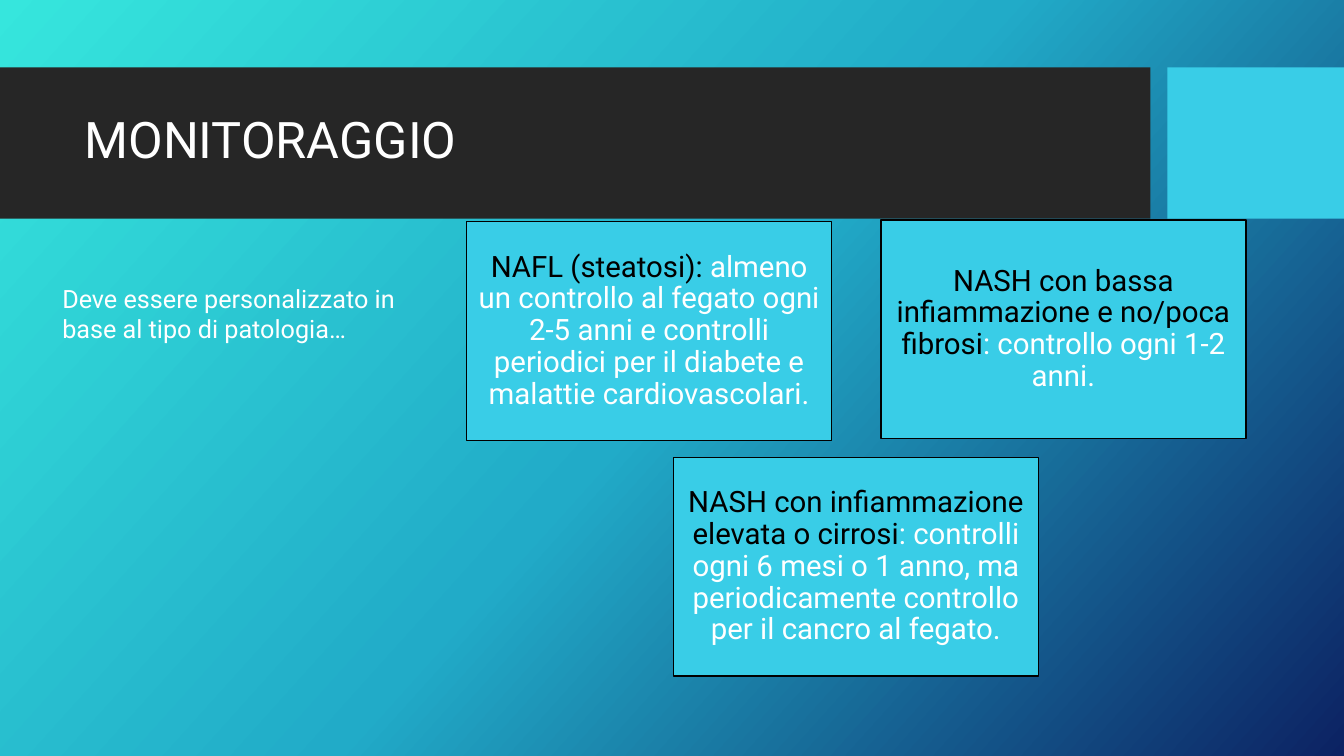
from copy import deepcopy
from pptx import Presentation
from pptx.dml.color import RGBColor
from pptx.enum.shapes import MSO_SHAPE
from pptx.enum.text import MSO_ANCHOR, PP_ALIGN
from pptx.oxml.ns import qn
from pptx.util import Cm, Pt

WIDE, HIGH = 33.87, 19.05
FONT = "Roboto"
DARK, CYAN, WHITE, BLACK = "262626", "39CDE7", "FFFFFF", "000000"
BLEND = [(0, "36E6DD"), (0.5, "21ABC8"), (1, "0C2263")]


def tint(code):
    return RGBColor.from_string(code)


def rect(slide, box, fill, line=None):
    shape = slide.shapes.add_shape(MSO_SHAPE.RECTANGLE, *map(Cm, box))
    shape.shadow.inherit = False
    shape.fill.solid()
    shape.fill.fore_color.rgb = tint(fill)
    if line:
        shape.line.color.rgb = tint(line)
        shape.line.width = Pt(1)
    else:
        shape.line.fill.background()
    return shape


def write(shape, runs, size, anchor=MSO_ANCHOR.TOP, align=PP_ALIGN.LEFT, gap=1.0):
    frame = shape.text_frame
    frame.word_wrap = True
    frame.vertical_anchor = anchor
    para = frame.paragraphs[0]
    para.alignment = align
    para.line_spacing = gap
    for text, code in runs:
        run = para.add_run()
        run.text = text
        run.font.name = FONT
        run.font.size = Pt(size)
        run.font.color.rgb = tint(code)


def backdrop(slide):
    fill = slide.background.fill
    fill.gradient()
    fill.gradient_angle = 318
    # The default gradient has two stops; add the third
    stops = slide.element.find(".//" + qn("a:gsLst"))
    stops.append(deepcopy(stops[-1]))
    for stop, (place, code) in zip(fill.gradient_stops, BLEND):
        stop.position = place
        stop.color.rgb = tint(code)


def header(slide, box, title):
    left, top, width, height = box
    side, gap = 4.45, 0.43
    bar = width - side - gap
    rect(slide, (left, top, bar, height), DARK)
    rect(slide, (left + bar + gap, top, side, height), CYAN)
    area = (left + 1.88, top + 0.38, bar - 2.3, height - 0.81)
    label = slide.shapes.add_textbox(*map(Cm, area))
    write(label, [(title, WHITE)], 36, MSO_ANCHOR.MIDDLE, gap=0.9)


def intro(slide, box, text):
    label = slide.shapes.add_textbox(*map(Cm, box))
    write(label, [(text, WHITE)], 18)


def card(slide, box, stage, advice):
    shape = rect(slide, box, CYAN, BLACK)
    frame = shape.text_frame
    frame.margin_left = frame.margin_right = Cm(0.23)
    frame.margin_top = frame.margin_bottom = Cm(0.23)
    write(shape, [(stage, BLACK), (advice, WHITE)], 21,
          MSO_ANCHOR.MIDDLE, PP_ALIGN.CENTER, 0.9)


def main():
    deck = Presentation()
    deck.slide_width, deck.slide_height = Cm(WIDE), Cm(HIGH)
    slide = deck.slides.add_slide(deck.slide_layouts[6])
    backdrop(slide)
    header(slide, (0, 1.7, WIDE, 3.81), "MONITORAGGIO")
    intro(slide, (1.32, 7.01, 8.97, 1.8),
          "Deve essere personalizzato in base al tipo di patologia…")
    # Care plan for each stage
    cards = [
        (11.76, 5.59, "NAFL (steatosi): ",
         "almeno un controllo al fegato ogni 2-5 anni e controlli "
         "periodici per il diabete e malattie cardiovascolari."),
        (22.2, 5.54, "NASH con bassa infiammazione e no/poca fibrosi",
         ": controllo ogni 1-2 anni."),
        (16.97, 11.53, "NASH con infiammazione elevata o cirrosi",
         ": controlli ogni 6 mesi o 1 anno, ma periodicamente "
         "controllo per il cancro al fegato."),
    ]
    for left, top, stage, advice in cards:
        card(slide, (left, top, 9.2, 5.51), stage, advice)
    deck.save("out.pptx")


if __name__ == "__main__":
    main()
